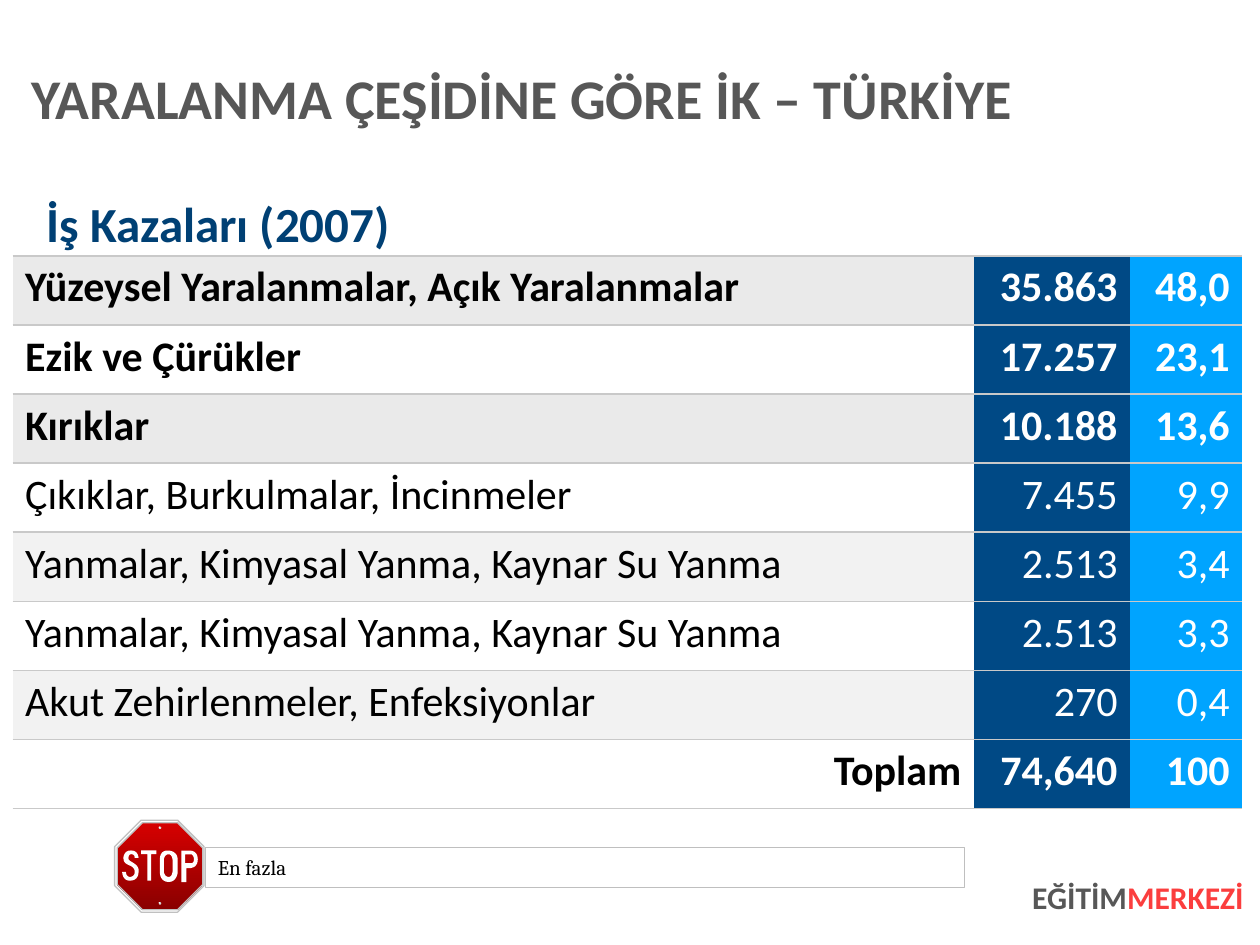
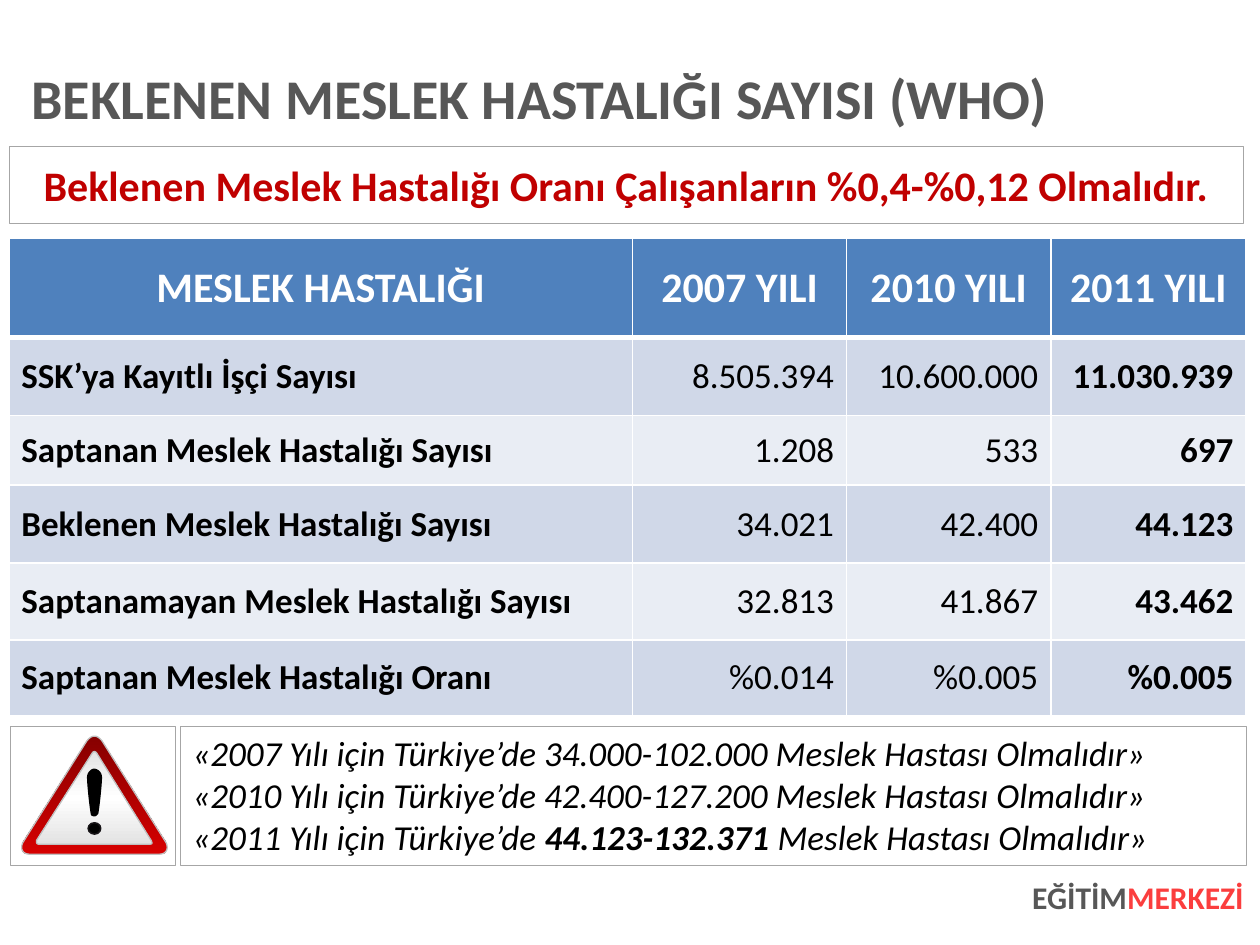
import copy

import pptx
import pptx.dml.color
import pptx.enum.shapes
import pptx.enum.text
import pptx.oxml
import pptx.oxml.ns
import pptx.util

Inches = pptx.util.Inches
Pt = pptx.util.Pt
RGB = pptx.dml.color.RGBColor
ALIGN = pptx.enum.text.PP_ALIGN
ANCHOR = pptx.enum.text.MSO_ANCHOR
SHAPE = pptx.enum.shapes.MSO_SHAPE
qn = pptx.oxml.ns.qn

# Colours
WHITE, BLACK = RGB(255, 255, 255), RGB(0, 0, 0)
TITLE_GREY = RGB(0x57, 0x57, 0x57)
FOOTER_RED = RGB(0xFB, 0x3E, 0x3E)
HEADING_BLUE = RGB(0x00, 0x40, 0x74)
COUNT_BLUE, PERCENT_BLUE = RGB(0x00, 0x49, 0x85), RGB(0x00, 0xA4, 0xFF)
MAJOR_BAND, MINOR_BAND = RGB(0xEA, 0xEA, 0xEA), RGB(0xF2, 0xF2, 0xF2)
RULE_GREY = RGB(0xC9, 0xC9, 0xC9)
HEADER_BLUE = RGB(0x4F, 0x81, 0xBD)
DARK_BAND, LIGHT_BAND = RGB(0xD0, 0xD8, 0xE8), RGB(0xE9, 0xED, 0xF4)
NOTE_RED = RGB(0xC0, 0x00, 0x00)
FRAME_GREY, CAPTION_GREY = RGB(0xA6, 0xA6, 0xA6), RGB(0xBF, 0xBF, 0xBF)
SIGN_EDGE, BOLT_GREY = RGB(0xC0, 0xC0, 0xC0), RGB(0xD2, 0xD2, 0xD2)
SIGN_RED = RGB(0xD6, 0x00, 0x00)
STOP_DARK, WARNING_DARK = RGB(0x8A, 0x00, 0x00), RGB(0x86, 0x00, 0x00)
PANEL_GREY, DOT_EDGE = RGB(0xE3, 0xE3, 0xE3), RGB(0x16, 0x13, 0x16)

# Content
FOOTER = [("EĞİTİM", {"color": TITLE_GREY}), ("MERKEZİ", {"color": FOOTER_RED})]

INJURY_TITLE = "YARALANMA ÇEŞİDİNE GÖRE İK – TÜRKİYE"
INJURY_HEADING = "İş Kazaları (2007)"
INJURIES = [
    ("Yüzeysel Yaralanmalar, Açık Yaralanmalar", "35.863", "48,0"),
    ("Ezik ve Çürükler", "17.257", "23,1"),
    ("Kırıklar", "10.188", "13,6"),
    ("Çıkıklar, Burkulmalar, İncinmeler", "7.455", "9,9"),
    ("Yanmalar, Kimyasal Yanma, Kaynar Su Yanma", "2.513", "3,4"),
    ("Yanmalar, Kimyasal Yanma, Kaynar Su Yanma", "2.513", "3,3"),
    ("Akut Zehirlenmeler, Enfeksiyonlar", "270", "0,4"),
    ("Toplam", "74,640", "100"),
]
MAJOR_INJURIES = 3
CAPTION = "En fazla"

DISEASE_TITLE = "BEKLENEN MESLEK HASTALIĞI SAYISI (WHO)"
DISEASE_RATE = "Beklenen Meslek Hastalığı Oranı Çalışanların %0,4-%0,12 Olmalıdır."
DISEASES = [
    ("MESLEK HASTALIĞI", "2007 YILI", "2010 YILI", "2011 YILI"),
    ("SSK’ya Kayıtlı İşçi Sayısı", "8.505.394", "10.600.000", "11.030.939"),
    ("Saptanan Meslek Hastalığı Sayısı", "1.208", "533", "697"),
    ("Beklenen Meslek Hastalığı Sayısı", "34.021", "42.400", "44.123"),
    ("Saptanamayan Meslek Hastalığı Sayısı", "32.813", "41.867", "43.462"),
    ("Saptanan Meslek Hastalığı Oranı", "%0.014", "%0.005", "%0.005"),
]
EXPECTATIONS = [("2007", "34.000-102.000", False), ("2010", "42.400-127.200", False),
                ("2011", "44.123-132.371", True)]

# Sign outlines: two numbers are a line's end, six are a curve
STOP_LETTERS = [
    [[(0.98, 6.81), (0.98, 6.86, 1.02, 6.86, 1.05, 6.88), (1.06, 6.89, 1.07, 6.9, 1.07, 6.92),
      (1.07, 6.95, 1.05, 6.96, 1.03, 6.96), (1.02, 6.96, 1, 6.95, 1, 6.92), (0.97, 6.92),
      (0.97, 6.92, 0.97, 6.99, 1.03, 6.99), (1.1, 6.99, 1.1, 6.93, 1.1, 6.92),
      (1.1, 6.91, 1.11, 6.88, 1.06, 6.85), (1.03, 6.83, 1.02, 6.83, 1.02, 6.81),
      (1.02, 6.79, 1.03, 6.78, 1.04, 6.78), (1.05, 6.78, 1.07, 6.78, 1.07, 6.81),
      (1.1, 6.81), (1.1, 6.81, 1.1, 6.75, 1.04, 6.75), (0.98, 6.75, 0.98, 6.81, 0.98, 6.81)]],
    [[(1.17, 6.99), (1.17, 6.78), (1.12, 6.78), (1.12, 6.75),
      (1.24, 6.75), (1.24, 6.78), (1.2, 6.78), (1.2, 6.99)]],
    [[(1.33, 6.75), (1.27, 6.75, 1.27, 6.81, 1.27, 6.81), (1.27, 6.93),
      (1.27, 6.93, 1.27, 7, 1.34, 7), (1.4, 7, 1.41, 6.93, 1.41, 6.93),
      (1.41, 6.82), (1.41, 6.78, 1.38, 6.75, 1.33, 6.75)],
     [(1.37, 6.91), (1.37, 6.91, 1.37, 6.96, 1.34, 6.96), (1.3, 6.96, 1.3, 6.91, 1.3, 6.91),
      (1.3, 6.83), (1.3, 6.83, 1.3, 6.78, 1.34, 6.78), (1.36, 6.78, 1.37, 6.81, 1.37, 6.83)]],
    [[(1.5, 6.75), (1.44, 6.75), (1.44, 7), (1.48, 7), (1.48, 6.89), (1.5, 6.89),
      (1.54, 6.89, 1.57, 6.87, 1.57, 6.82), (1.57, 6.77, 1.54, 6.75, 1.5, 6.75)],
     [(1.52, 6.85), (1.47, 6.85), (1.47, 6.78), (1.52, 6.78),
      (1.52, 6.78, 1.54, 6.79, 1.54, 6.82), (1.54, 6.82, 1.54, 6.85, 1.52, 6.85)]],
]
WARNING_RIM = [[(0.24, 6.78), (0.18, 6.78, 0.16, 6.74, 0.18, 6.69), (0.69, 5.88),
                (0.73, 5.83, 0.77, 5.83, 0.81, 5.88), (1.32, 6.69),
                (1.34, 6.74, 1.32, 6.78, 1.26, 6.78)]]
WARNING_PANEL = [[(0.31, 6.7), (0.29, 6.7, 0.29, 6.69, 0.29, 6.67), (0.73, 5.98),
                  (0.74, 5.96, 0.76, 5.96, 0.77, 5.98), (1.2, 6.67),
                  (1.21, 6.69, 1.21, 6.7, 1.19, 6.7)]]
EXCLAMATION = [[(0.75, 6.1), (0.76, 6.1, 0.78, 6.11, 0.79, 6.12),
                (0.8, 6.13, 0.81, 6.15, 0.81, 6.17), (0.81, 6.22, 0.79, 6.41, 0.78, 6.46),
                (0.77, 6.47, 0.76, 6.48, 0.75, 6.48), (0.73, 6.48, 0.72, 6.47, 0.72, 6.46),
                (0.71, 6.41, 0.69, 6.22, 0.69, 6.17), (0.69, 6.15, 0.7, 6.13, 0.71, 6.12),
                (0.72, 6.11, 0.73, 6.1, 0.75, 6.1)]]


# Text
def write(frame, lines, size, color=BLACK, bold=False, italic=False, font="Calibri",
          align=ALIGN.LEFT, anchor=ANCHOR.TOP, insets=None):
    """Each line is a list of (text, overrides) runs."""
    frame.word_wrap = True
    frame.vertical_anchor = anchor
    if insets:
        frame.margin_left = frame.margin_right = Inches(insets[0])
        frame.margin_top = frame.margin_bottom = Inches(insets[1])
    for index, runs in enumerate(lines):
        paragraph = frame.add_paragraph() if index else frame.paragraphs[0]
        paragraph.alignment = align
        for text, changes in runs:
            run = paragraph.add_run()
            run.text = text
            run.font.name, run.font.size = font, Pt(size)
            run.font.bold, run.font.italic = changes.get("bold", bold), italic
            run.font.color.rgb = changes.get("color", color)


def add_text(slide, at, lines, size, **style):
    box = slide.shapes.add_textbox(*map(Inches, at))
    write(box.text_frame, lines, size, **style)


def add_titled_slide(deck, heading):
    slide = deck.slides.add_slide(deck.slide_layouts[5])
    title = slide.shapes.title
    title.left, title.top, title.width, title.height = map(Inches, (0.25, 0.45, 9.64, 0.71))
    write(title.text_frame, [[(heading, {})]], 32, TITLE_GREY, bold=True,
          anchor=ANCHOR.MIDDLE, insets=(0, 0.05))
    title.text_frame.auto_size = pptx.enum.text.MSO_AUTO_SIZE.NONE
    title.text_frame.paragraphs[0].line_spacing = 0.9
    add_text(slide, (7.56, 6.97, 2.31, 0.56), [FOOTER], 18, bold=True,
             align=ALIGN.RIGHT, insets=(0, 0))
    return slide


# Shapes
def paint(shape, fill=None, edge=None, weight=0.75):
    """Fill is None, one colour, or a list of colours from top to bottom."""
    shape.shadow.inherit = False
    if fill is None:
        shape.fill.background()
    elif isinstance(fill, list):
        shape.fill.gradient()
        shape.fill.gradient_angle = 270
        stop_list = shape._element.spPr.find(".//" + qn("a:gsLst"))
        while len(stop_list) < len(fill):
            stop_list.append(copy.deepcopy(stop_list[0]))
        for index, (stop, color) in enumerate(zip(shape.fill.gradient_stops, fill)):
            stop.position = index / (len(fill) - 1)
            stop.color.rgb = color
    else:
        shape.fill.solid()
        shape.fill.fore_color.rgb = fill
    if edge is None:
        shape.line.fill.background()
    else:
        shape.line.color.rgb = edge
        shape.line.width = Pt(weight)


def add_preset(slide, kind, at, **look):
    shape = slide.shapes.add_shape(kind, *map(Inches, at))
    paint(shape, **look)
    return shape


def flatten(contour, steps=8):
    points = [contour[0]]
    for part in contour[1:]:
        if len(part) == 2:
            points.append(part)
            continue
        nodes = [points[-1], part[:2], part[2:4], part[4:]]
        for step in range(1, steps + 1):
            t = step / steps
            weights = ((1 - t) ** 3, 3 * t * (1 - t) ** 2, 3 * t ** 2 * (1 - t), t ** 3)
            points.append(tuple(sum(w * node[axis] for w, node in zip(weights, nodes))
                                for axis in (0, 1)))
    return [(Inches(x), Inches(y)) for x, y in points]


def add_outline(slide, contours, **look):
    first, *holes = map(flatten, contours)
    builder = slide.shapes.build_freeform(*first[0])
    builder.add_line_segments(first[1:], close=True)
    for hole in holes:
        builder.move_to(*hole[0])
        builder.add_line_segments(hole[1:], close=True)
    paint(builder.convert_to_shape(), **look)


def octagon(left, top, width, height, cut):
    right, bottom = left + width, top + height
    return [[(left + cut, bottom), (left, bottom - cut), (left, top + cut), (left + cut, top),
             (right - cut, top), (right, top + cut), (right, bottom - cut), (right - cut, bottom)]]


# Tables
def set_borders(cell, **borders):
    """Each border is (colour, points), or None for no line."""
    properties = cell._tc.get_or_add_tcPr()
    for index, side in enumerate("LRTB"):
        color, weight = borders[side] or (None, 0)
        line = pptx.oxml.parse_xml(
            f'<a:ln{side} xmlns:a="http://schemas.openxmlformats.org/drawingml/2006/main" '
            f'w="{Pt(weight)}">'
            + (f'<a:solidFill><a:srgbClr val="{color}"/></a:solidFill>' if color else "<a:noFill/>")
            + f"</a:ln{side}>")
        properties.insert(index, line)


def add_grid(slide, left, top, widths, heights, rows, style_cell):
    """style_cell(row, column) gives the fill, the borders and the text style."""
    table = slide.shapes.add_table(len(rows), len(widths), Inches(left), Inches(top),
                                   Inches(sum(widths)), Inches(sum(heights))).table
    for column, width in zip(table.columns, widths):
        column.width = Inches(width)
    for row, height in zip(table.rows, heights):
        row.height = Inches(height)
    for r, values in enumerate(rows):
        for c, value in enumerate(values):
            cell = table.cell(r, c)
            fill, borders, anchor, style = style_cell(r, c)
            cell.fill.solid()
            cell.fill.fore_color.rgb = fill
            set_borders(cell, **borders)
            write(cell.text_frame, [[(value, {})]], **style)
            cell.vertical_anchor = anchor


def injury_cell(r, c):
    total = r == len(INJURIES) - 1
    band = WHITE if r % 2 else MAJOR_BAND if r < MAJOR_INJURIES else MINOR_BAND
    rule = (RULE_GREY, 1)
    style = {"size": 24, "color": WHITE if c else BLACK, "bold": r < MAJOR_INJURIES or total,
             "align": ALIGN.RIGHT if c or total else ALIGN.LEFT}
    return ((band, COUNT_BLUE, PERCENT_BLUE)[c],
            {"L": None, "R": None, "T": rule, "B": rule}, ANCHOR.TOP, style)


def disease_cell(r, c):
    thin, thick = (WHITE, 1), (WHITE, 3)
    borders = {"L": thin, "R": thin, "T": thick if r == 1 else thin, "B": thin if r else thick}
    if r == 0:
        fill = HEADER_BLUE
        style = {"size": 24, "color": WHITE, "bold": True, "align": ALIGN.CENTER}
    else:
        fill = DARK_BAND if r % 2 else LIGHT_BAND
        style = {"size": 20, "bold": c in (0, 3), "align": ALIGN.RIGHT if c else ALIGN.LEFT}
    return fill, borders, ANCHOR.MIDDLE, style


# Slides
def build_injuries(deck):
    slide = add_titled_slide(deck, INJURY_TITLE)
    add_grid(slide, 0.1, 2.03, (7.63, 1.24, 0.89), [4.39 / len(INJURIES)] * len(INJURIES),
             INJURIES, injury_cell)
    add_text(slide, (0.27, 1.49, 5.19, 0.57), [[(INJURY_HEADING, {})]], 28,
             color=HEADING_BLUE, bold=True)
    # Stop sign
    add_outline(slide, octagon(0.91, 6.51, 0.71, 0.73, 0.21), fill=WHITE, edge=SIGN_EDGE)
    add_outline(slide, octagon(0.93, 6.53, 0.68, 0.69, 0.2),
                fill=[SIGN_RED, STOP_DARK], edge=SIGN_EDGE)
    for letter in STOP_LETTERS:
        add_outline(slide, letter, fill=WHITE)
    for bolt_top in (6.56, 7.16):
        add_preset(slide, SHAPE.OVAL, (1.26, bolt_top, 0.02, 0.02), fill=BOLT_GREY)
        add_preset(slide, SHAPE.OVAL, (1.26, bolt_top, 0.01, 0.01), fill=WHITE)
    caption = add_preset(slide, SHAPE.RECTANGLE, (1.63, 6.72, 6.02, 0.32),
                         edge=CAPTION_GREY, weight=0.25)
    write(caption.text_frame, [[(CAPTION, {})]], 12, font="Cambria", anchor=ANCHOR.MIDDLE)


def build_diseases(deck):
    slide = add_titled_slide(deck, DISEASE_TITLE)
    add_grid(slide, 0.07, 1.89, (4.95, 1.7, 1.62, 1.55), (0.79, 0.62, 0.55, 0.62, 0.61, 0.6),
             DISEASES, disease_cell)
    rate, expected, _ = [
        add_preset(slide, SHAPE.RECTANGLE, at, edge=FRAME_GREY, weight=0.25)
        for at in ((0.07, 1.16, 9.8, 0.61), (1.43, 5.76, 8.46, 1.11), (0.08, 5.76, 1.31, 1.11))]
    write(rate.text_frame, [[(DISEASE_RATE, {})]], 24, NOTE_RED, bold=True,
          align=ALIGN.CENTER, anchor=ANCHOR.MIDDLE)
    write(expected.text_frame,
          [[(f"«{year} Yılı için Türkiye’de ", {}), (f"{span} ", {"bold": strong}),
            ("Meslek Hastası Olmalıdır»", {})] for year, span, strong in EXPECTATIONS],
          20, italic=True)
    # Warning sign
    add_outline(slide, WARNING_RIM, fill=[WARNING_DARK, SIGN_RED], edge=SIGN_EDGE)
    add_outline(slide, WARNING_PANEL, fill=[PANEL_GREY, WHITE, PANEL_GREY], edge=SIGN_EDGE)
    add_outline(slide, EXCLAMATION, fill=BLACK)
    add_preset(slide, SHAPE.OVAL, (0.7, 6.53, 0.1, 0.09), fill=BLACK, edge=DOT_EDGE, weight=0.88)


def main():
    deck = pptx.Presentation()
    deck.slide_width, deck.slide_height = Inches(10), Inches(7.5)
    build_injuries(deck)
    build_diseases(deck)
    deck.save("out.pptx")


if __name__ == "__main__":
    main()
